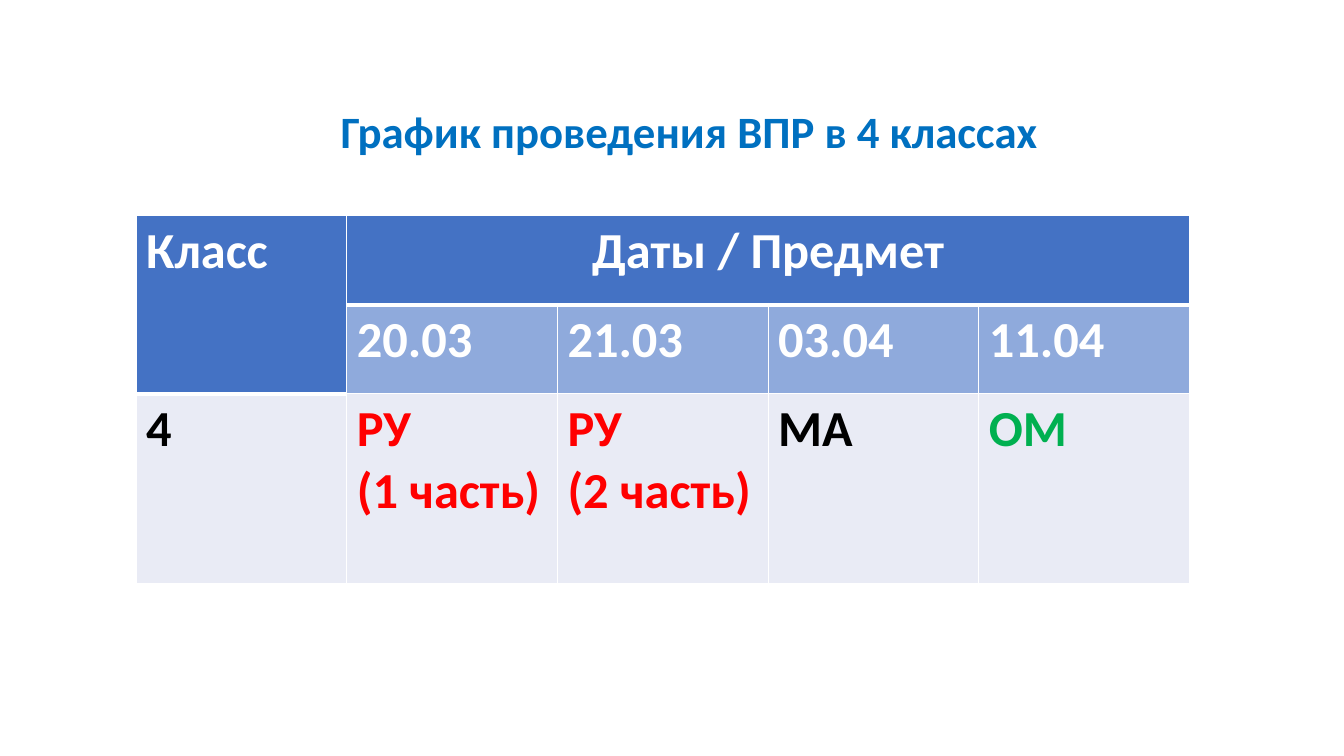
from dataclasses import dataclass

from lxml.etree import SubElement
from pptx import Presentation
from pptx.dml.color import RGBColor
from pptx.enum.text import MSO_ANCHOR, MSO_AUTO_SIZE, PP_ALIGN
from pptx.oxml.ns import qn
from pptx.util import Cm, Pt

HEADING = "График проведения ВПР в 4 классах"
SCHEDULE = [
    ["Класс", "Даты / Предмет", "", "", ""],
    ["", "20.03", "21.03", "03.04", "11.04"],
    ["4", "РУ\n(1 часть)", "РУ\n(2 часть)", "МА", "ОМ"],
]
MERGES = [((0, 0), (1, 0)), ((0, 1), (0, 4))]


@dataclass(frozen=True)
class Theme:
    font: str = "Calibri"
    heading_size: int = 32
    cell_size: int = 36
    heading: str = "0070C0"
    white: str = "FFFFFF"
    black: str = "000000"
    header_fill: str = "4472C4"
    date_fill: str = "8FAADC"
    body_fill: str = "E9EBF5"
    thin: int = 1
    thick: int = 3


THEME = Theme()
SUBJECT_COLORS = {"РУ": "FF0000", "ОМ": "00B050"}
COLUMN_WIDTH = Cm(5.31)
ROW_HEIGHTS = [Cm(2.24), Cm(2.24), Cm(4.78)]


def format_text(frame, size, color):
    for paragraph in frame.paragraphs:
        for run in paragraph.runs:
            run.font.name = THEME.font
            run.font.size = Pt(size)
            run.font.bold = True
            run.font.color.rgb = RGBColor.from_string(color)


def draw_borders(cell, top, bottom):
    """Give a cell white borders; top and bottom widths are in points."""
    properties = cell._tc.get_or_add_tcPr()
    for side, width in (("L", THEME.thin), ("R", THEME.thin), ("T", top), ("B", bottom)):
        line = SubElement(properties, qn(f"a:ln{side}"), w=str(Pt(width)))
        fill = SubElement(line, qn("a:solidFill"))
        SubElement(fill, qn("a:srgbClr"), val=THEME.white)


def is_header(row, column):
    return row == 0 or (row == 1 and column == 0)


def edge_width(row, column):
    """Width of the edge below a cell: thick where the header ends."""
    ends_header = is_header(row, column) and not is_header(row + 1, column)
    return THEME.thick if ends_header else THEME.thin


def cell_colors(row, column, text):
    if is_header(row, column):
        return THEME.header_fill, THEME.white
    if row == 1:
        return THEME.date_fill, THEME.white
    subject = text.split("\n")[0]
    return THEME.body_fill, SUBJECT_COLORS.get(subject, THEME.black)


def add_heading(slide):
    heading = slide.shapes.title
    heading.left, heading.top = Cm(8.33), Cm(2.49)
    heading.width, heading.height = Cm(18.26), Cm(1.63)
    frame = heading.text_frame
    frame.text = HEADING
    frame.word_wrap = False
    frame.auto_size = MSO_AUTO_SIZE.SHAPE_TO_FIT_TEXT
    frame.vertical_anchor = MSO_ANCHOR.TOP
    frame.paragraphs[0].alignment = PP_ALIGN.LEFT
    format_text(frame, THEME.heading_size, THEME.heading)


def add_schedule(slide):
    columns = len(SCHEDULE[0])
    schedule = slide.shapes.add_table(
        len(SCHEDULE), columns, Cm(3.43), Cm(5.44),
        COLUMN_WIDTH * columns, sum(ROW_HEIGHTS),
    ).table
    for column in schedule.columns:
        column.width = COLUMN_WIDTH
    for row, height in zip(schedule.rows, ROW_HEIGHTS):
        row.height = height
    for first, last in MERGES:
        schedule.cell(*first).merge(schedule.cell(*last))

    for row, texts in enumerate(SCHEDULE):
        for column, text in enumerate(texts):
            cell = schedule.cell(row, column)
            fill, color = cell_colors(row, column, text)
            draw_borders(cell, edge_width(row - 1, column) if row else THEME.thin,
                         edge_width(row, column))
            cell.fill.solid()
            cell.fill.fore_color.rgb = RGBColor.from_string(fill)
            if text:
                cell.text_frame.text = text
                format_text(cell.text_frame, THEME.cell_size, color)
    schedule.cell(0, 1).text_frame.paragraphs[0].alignment = PP_ALIGN.CENTER


def main():
    deck = Presentation()
    deck.slide_width, deck.slide_height = Cm(33.87), Cm(19.05)
    slide = deck.slides.add_slide(deck.slide_layouts[5])
    add_heading(slide)
    add_schedule(slide)
    deck.save("out.pptx")


if __name__ == "__main__":
    main()
